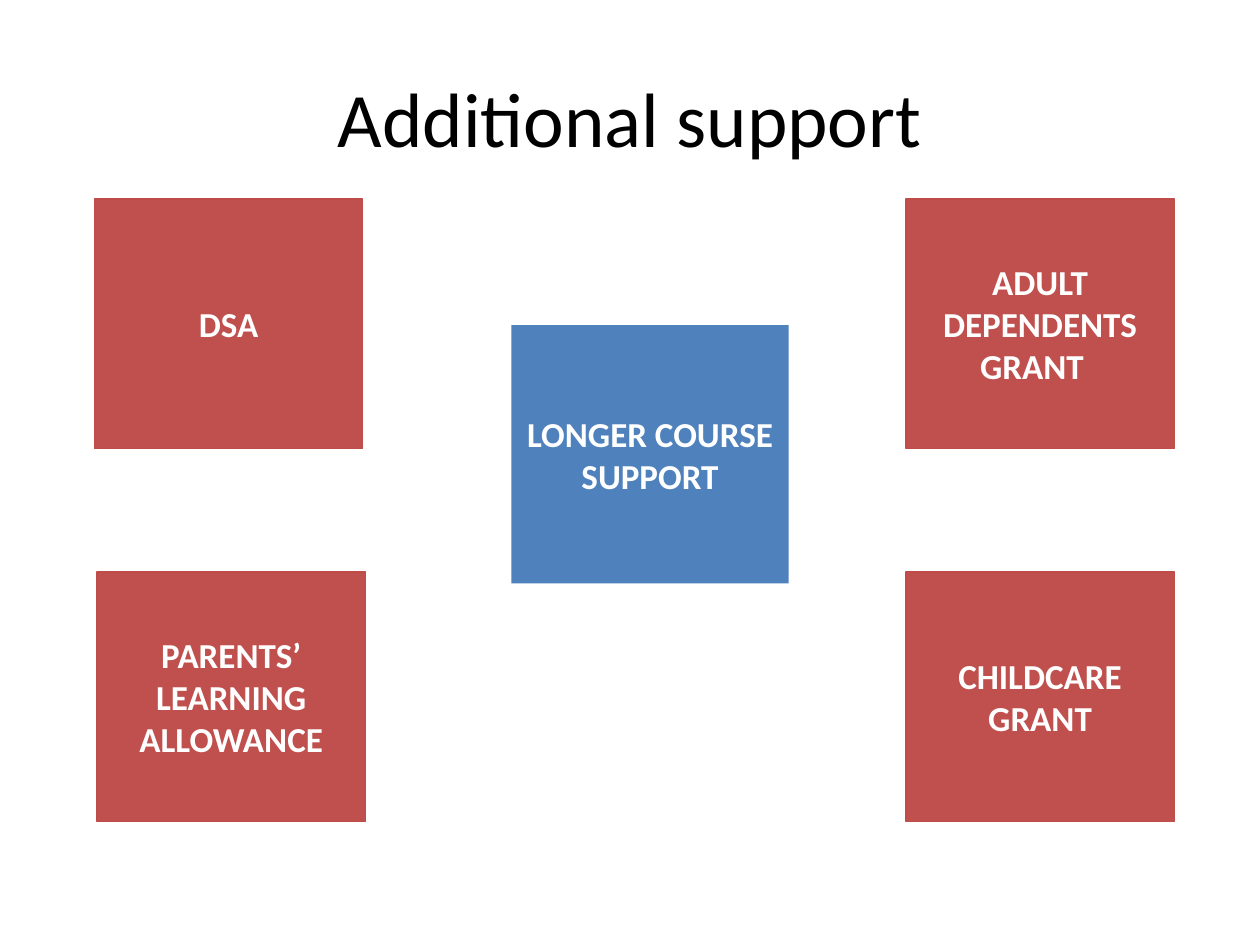
from dataclasses import dataclass
from typing import Optional

import pptx
import pptx.dml.color
import pptx.enum.shapes
import pptx.enum.text
import pptx.util

Inches = pptx.util.Inches


@dataclass(frozen=True)
class Theme:
    font: str = "Calibri"
    title_size: int = 44
    box_size: int = 20
    black: str = "000000"
    white: str = "FFFFFF"
    red: str = "C0504D"
    red_edge: str = "BF4C48"
    blue: str = "4F81BD"


@dataclass(frozen=True)
class SupportBox:
    lines: tuple[str, ...]
    left: float
    top: float
    width: float = 2.13
    height: float = 1.98
    fill: str = Theme.red
    edge: Optional[str] = Theme.red_edge
    last_right_margin: float = 0


THEME = Theme()
UPPER, LOWER, RIGHT = 1.58, 4.54, 7.19
BOXES = (
    SupportBox(("ADULT DEPENDENTS", "GRANT"), RIGHT, UPPER, last_right_margin=0.13),
    SupportBox(("DSA",), 0.75, UPPER),
    SupportBox(("CHILDCARE", "GRANT"), RIGHT, LOWER),
    SupportBox(("PARENTS’ LEARNING ALLOWANCE",), 0.77, LOWER),
    SupportBox(("LONGER COURSE SUPPORT",), 4.06, 2.58, 2.2, 2.05, THEME.blue, None),
)


def rgb(value: str) -> pptx.dml.color.RGBColor:
    return pptx.dml.color.RGBColor.from_string(value)


def write_text(frame, lines: tuple[str, ...], *, size: int, color: str,
               bold: bool = False) -> None:
    """Fill a text frame with centred paragraphs."""
    frame.word_wrap = True
    frame.vertical_anchor = pptx.enum.text.MSO_ANCHOR.MIDDLE
    for index, line in enumerate(lines):
        para = frame.paragraphs[0] if index == 0 else frame.add_paragraph()
        para.alignment = pptx.enum.text.PP_ALIGN.CENTER
        span = para.add_run()
        span.text = line
        span.font.name = THEME.font
        span.font.size = pptx.util.Pt(size)
        span.font.bold = bold
        span.font.color.rgb = rgb(color)


def draw_box(page, item: SupportBox) -> None:
    box = page.shapes.add_shape(
        pptx.enum.shapes.MSO_SHAPE.RECTANGLE,
        Inches(item.left), Inches(item.top), Inches(item.width), Inches(item.height))
    box.shadow.inherit = False
    box.fill.solid()
    box.fill.fore_color.rgb = rgb(item.fill)
    if item.edge:
        box.line.color.rgb = rgb(item.edge)
        box.line.width = pptx.util.Pt(0.75)
    else:
        box.line.fill.background()
    write_text(box.text_frame, item.lines, size=THEME.box_size,
               color=THEME.white, bold=True)
    if item.last_right_margin:
        properties = box.text_frame.paragraphs[-1]._p.get_or_add_pPr()
        properties.set("marR", str(Inches(item.last_right_margin)))


def main() -> None:
    deck = pptx.Presentation()
    deck.slide_width, deck.slide_height = Inches(10), Inches(7.5)
    page = deck.slides.add_slide(deck.slide_layouts[5])

    # Title
    title = page.shapes.title
    title.left, title.top = Inches(0.5), Inches(0.3)
    title.width, title.height = Inches(9), Inches(1.25)
    write_text(title.text_frame, ("Additional support",),
               size=THEME.title_size, color=THEME.black)

    # Four corner grants around the central support box
    for item in BOXES:
        draw_box(page, item)

    deck.save("out.pptx")


if __name__ == "__main__":
    main()
